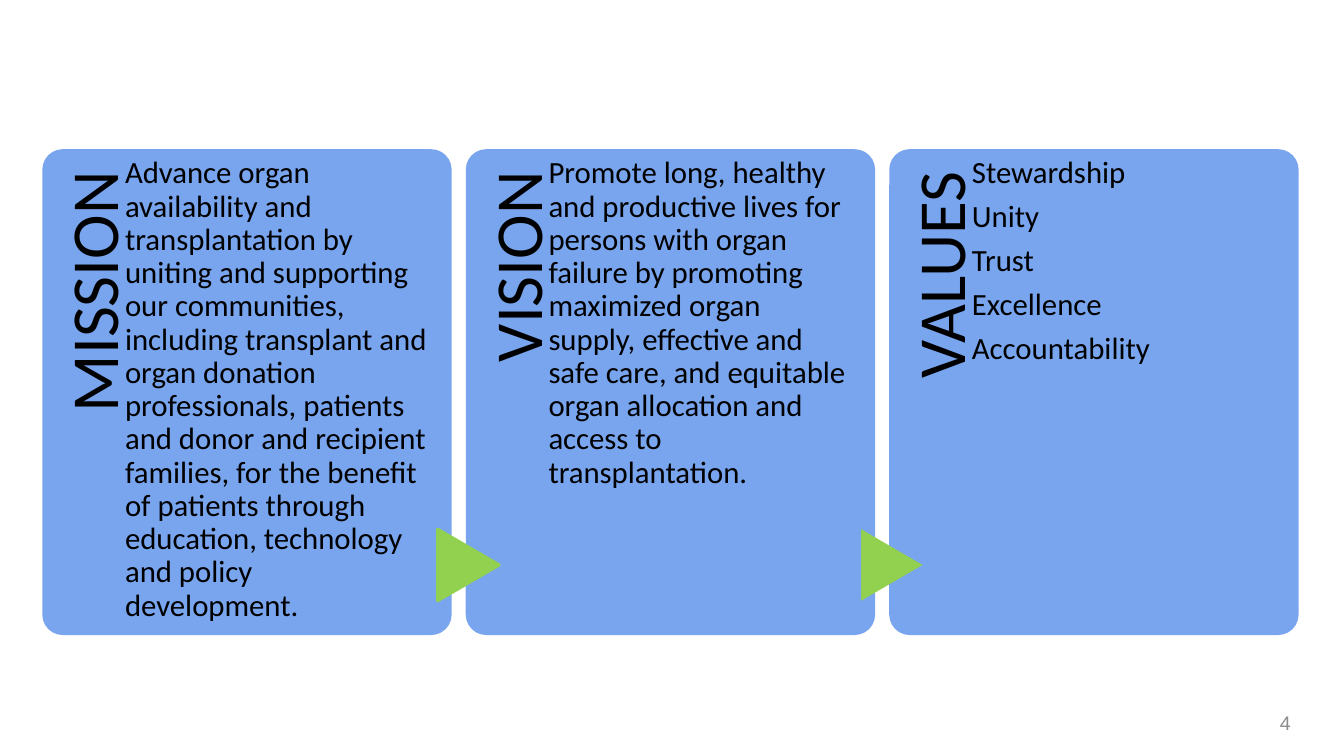
from dataclasses import dataclass

from pptx import Presentation
from pptx import util as u
from pptx.dml.color import RGBColor
from pptx.enum import shapes, text

PANEL_BLUE, ARROW_GREEN, BLACK, GRAY = "78A5EE", "92D050", "000000", "8C8C8C"
PANEL_LEFT, PANEL_TOP, PANEL_PITCH = 0.42, 1.48, 4.2
PANEL_WIDTH, PANEL_HEIGHT = 4.06, 4.82


@dataclass
class Box:
    left: float
    top: float
    width: float
    height: float

    def lengths(self) -> list:
        return [u.Inches(v) for v in (self.left, self.top, self.width, self.height)]


@dataclass
class Panel:
    heading: str
    lines: list[str]
    arrow_outline: float | None = None  # points; None means no outline


PANELS = [
    Panel("MISSION", [
        "Advance organ availability and transplantation by uniting and supporting "
        "our communities, including transplant and organ donation professionals, "
        "patients and donor and recipient families, for the benefit of patients "
        "through education, technology and policy development."]),
    Panel("VISION", [
        "Promote long, healthy and productive lives for persons with organ failure "
        "by promoting maximized organ supply, effective and safe care, and "
        "equitable organ allocation and access to transplantation."], 2.25),
    Panel("VALUES", ["Stewardship", "Unity", "Trust", "Excellence", "Accountability"]),
]


def color(value: str) -> RGBColor:
    return RGBColor.from_string(value)


def add_filled(slide, kind, box: Box, fill: str, outline: float | None = None):
    filled = slide.shapes.add_shape(kind, *box.lengths())
    filled.shadow.inherit = False
    filled.fill.solid()
    filled.fill.fore_color.rgb = color(fill)
    if outline is None:
        filled.line.fill.background()
    else:
        filled.line.color.rgb = color(fill)
        filled.line.width = u.Pt(outline)
    return filled


def add_text(slide, box: Box, lines: list[str], size: float, ink: str = BLACK,
             font: str = "Calibri", align=text.PP_ALIGN.LEFT, line_spacing: float = 0.9,
             space_after: float = 0.35, insets: tuple = (0, 0.08, 0, 0)):
    words = slide.shapes.add_textbox(*box.lengths())
    frame = words.text_frame
    frame.word_wrap = True
    (frame.margin_left, frame.margin_top,
     frame.margin_right, frame.margin_bottom) = [u.Inches(v) for v in insets]
    frame.text = "\n".join(lines)
    for paragraph in frame.paragraphs:
        paragraph.alignment = align
        paragraph.line_spacing = line_spacing
        paragraph.space_after = u.Pt(size * space_after)
        for run in paragraph.runs:
            run.font.name = font
            run.font.size = u.Pt(size)
            run.font.color.rgb = color(ink)
    return words


def add_panel(slide, index: int, panel: Panel) -> None:
    left = PANEL_LEFT + index * PANEL_PITCH
    card = add_filled(slide, shapes.MSO_SHAPE.ROUNDED_RECTANGLE,
                      Box(left, PANEL_TOP, PANEL_WIDTH, PANEL_HEIGHT), PANEL_BLUE)
    card.adjustments[0] = 0.05

    # Heading reads upwards along the left edge
    heading = add_text(slide, Box(left - 1.57, 3.04, 3.95, 0.81), [panel.heading], 48,
                       align=text.PP_ALIGN.RIGHT, insets=(0, 0.18, 0.23, 0))
    heading.rotation = 270

    # Arrow leading in from the previous panel
    if index:
        arrow = add_filled(slide, shapes.MSO_SHAPE.FLOWCHART_EXTRACT,
                           Box(left - 0.33, 5.3, 0.71, 0.61), ARROW_GREEN,
                           panel.arrow_outline)
        arrow.rotation = 90

    add_text(slide, Box(left + 0.82, PANEL_TOP, 3.02, PANEL_HEIGHT), panel.lines, 22)


def main() -> None:
    deck = Presentation()
    deck.slide_width, deck.slide_height = u.Inches(13.33), u.Inches(7.5)
    slide = deck.slides.add_slide(deck.slide_layouts[6])

    for index, panel in enumerate(PANELS):
        add_panel(slide, index, panel)

    # Page number
    page_number = add_text(slide, Box(10.64, 6.97, 2.26, 0.4), ["4"], 14, GRAY, "Arial",
                           text.PP_ALIGN.RIGHT, 1.0, 0, (0.1, 0.05, 0.1, 0.05))
    page_number.text_frame.vertical_anchor = text.MSO_ANCHOR.MIDDLE

    deck.save("out.pptx")


if __name__ == "__main__":
    main()
